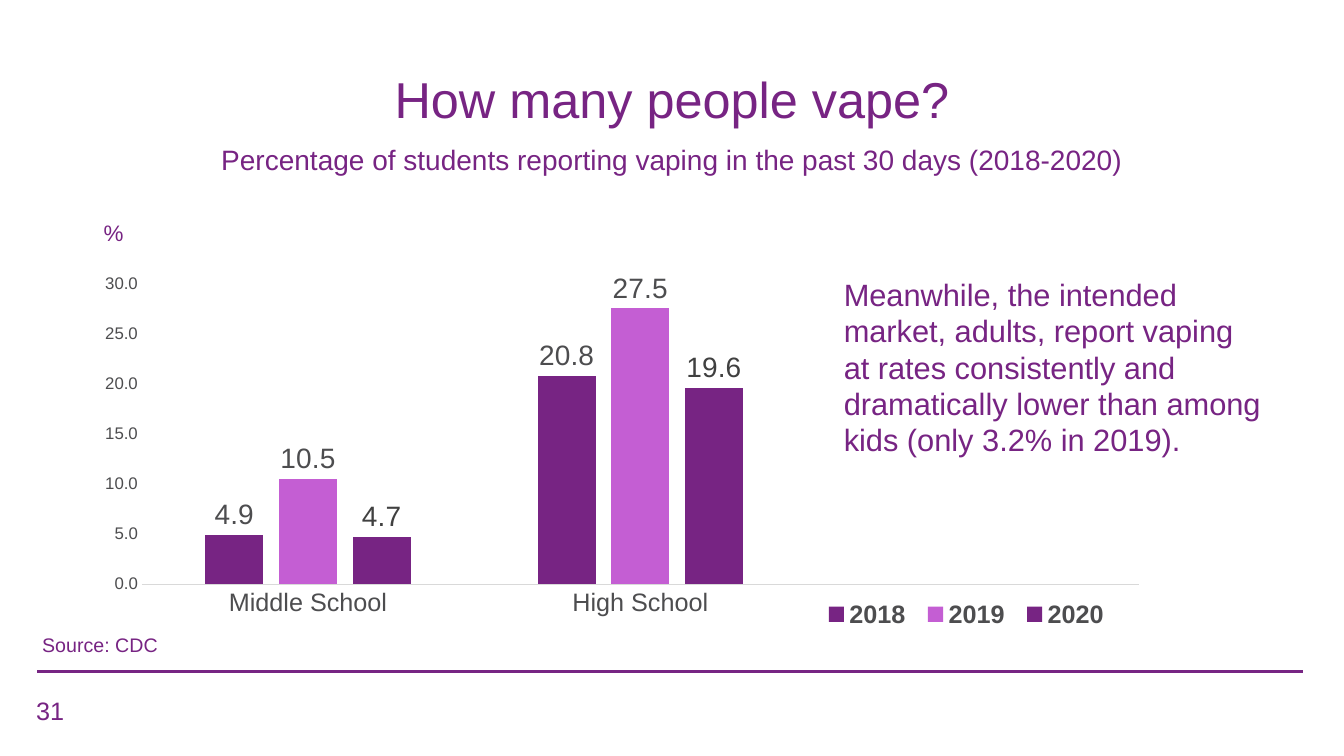
from lxml import etree
from pptx import Presentation
from pptx.chart.data import CategoryChartData
from pptx.dml.color import RGBColor
from pptx.enum.chart import XL_CHART_TYPE, XL_LABEL_POSITION, XL_LEGEND_POSITION, XL_TICK_MARK
from pptx.enum.shapes import MSO_CONNECTOR
from pptx.enum.text import MSO_ANCHOR, PP_ALIGN
from pptx.oxml.ns import qn
from pptx.util import Inches, Pt

FONT = "Arial"
PURPLE = "772483"
ORCHID = "C45ED3"
GRAY = "4D4D4F"


def color(value):
    """Turn a hex string into a colour."""
    return RGBColor.from_string(value)


def style_font(font, size, value, bold=False):
    """Set the typeface, size, colour and weight of a font."""
    font.name = FONT
    font.size = Pt(size)
    font.bold = bold
    font.color.rgb = color(value)


def add_text(slide, box, text, size, align=PP_ALIGN.LEFT, anchor=MSO_ANCHOR.TOP,
             spacing=None, wrap=True):
    """Place one paragraph of purple text in a box."""
    shape = slide.shapes.add_textbox(*map(Inches, box))
    frame = shape.text_frame
    frame.word_wrap = wrap
    frame.vertical_anchor = anchor
    paragraph = frame.paragraphs[0]
    paragraph.text = text
    paragraph.alignment = align
    paragraph.line_spacing = spacing
    for run in paragraph.runs:
        style_font(run.font, size, PURPLE)


def set_layout(parent, index, fractions, inner=False):
    """Fix the place of a chart part as fractions of the chart."""
    for old in parent.findall(qn("c:layout")):
        parent.remove(old)
    layout = etree.Element(qn("c:layout"))
    manual = etree.SubElement(layout, qn("c:manualLayout"))
    settings = [("layoutTarget", "inner")] if inner else []
    settings += [("xMode", "edge"), ("yMode", "edge")]
    settings += zip("xywh", map(str, fractions))
    for name, value in settings:
        etree.SubElement(manual, qn(f"c:{name}")).set("val", value)
    parent.insert(index, layout)


def style_axes(chart):
    """Format the category and value axes."""
    category_axis, value_axis = chart.category_axis, chart.value_axis
    for axis, size in ((category_axis, 18), (value_axis, 12)):
        axis.has_major_gridlines = False
        axis.major_tick_mark = axis.minor_tick_mark = XL_TICK_MARK.NONE
        style_font(axis.tick_labels.font, size, GRAY)
    category_axis.format.line.color.rgb = color("D9D9D9")
    category_axis.format.line.width = Pt(0.75)
    value_axis.format.line.fill.background()
    value_axis.minimum_scale, value_axis.maximum_scale = 0, 30
    value_axis.major_unit = 5
    value_axis.tick_labels.number_format = "0.0"
    value_axis.tick_labels.number_format_is_linked = False


def add_vaping_chart(slide, box):
    """Draw the columns by school level and year, with an empty third group."""
    data = CategoryChartData(number_format="0.0")
    data.categories = ["Middle School", "High School", ""]
    data.add_series("2018", (4.9, 20.8, None))
    data.add_series("2019", (10.5, 27.5, None))
    data.add_series("2020", (4.7, 19.6, None))
    chart = slide.shapes.add_chart(
        XL_CHART_TYPE.COLUMN_CLUSTERED, *map(Inches, box), data).chart
    chart.has_title = False
    style_font(chart.font, 10, "000000")
    style_axes(chart)

    plot = chart.plots[0]
    plot.gap_width, plot.overlap = 219, -27
    plot.vary_by_categories = False
    styles = ((PURPLE, GRAY), (ORCHID, GRAY), (PURPLE, "404040"))
    for series, (fill, label) in zip(plot.series, styles):
        series.format.fill.solid()
        series.format.fill.fore_color.rgb = color(fill)
        labels = series.data_labels
        labels.show_value = True
        labels.position = XL_LABEL_POSITION.OUTSIDE_END
        labels.number_format = "0.0"
        labels.number_format_is_linked = False
        style_font(labels.font, 20, label)

    chart.has_legend = True
    legend = chart.legend
    legend.position = XL_LEGEND_POSITION.BOTTOM
    legend.include_in_layout = False
    style_font(legend.font, 18, GRAY, bold=True)
    plot_area = chart.element.find(f".//{qn('c:plotArea')}")
    set_layout(plot_area, 0, (0.046, 0.033, 0.954, 0.752), inner=True)
    set_layout(chart.element.find(f".//{qn('c:legend')}"), 1, (0.69, 0.81, 0.29, 0.1))


def add_heading(slide, box):
    """Place the title with its subtitle below."""
    left, top, width, height = box
    add_text(slide, (left, top, width, 1.33), "How many people vape?", 36,
             PP_ALIGN.CENTER, MSO_ANCHOR.BOTTOM, 0.9)
    add_text(slide, (left + 1.12, top + 1.36, width - 2.24, height - 1.36),
             "Percentage of students reporting vaping in the past 30 days (2018-2020)",
             20, PP_ALIGN.CENTER)


def add_body(slide, box):
    """Place the chart, its unit and the remark beside it."""
    left, top, width, height = box
    add_text(slide, (left, top, 0.35, 0.37), "%", 16)
    add_vaping_chart(slide, (left, top + 0.56, 10.37, height - 0.56))
    add_text(slide, (left + width - 4.55, top + 0.57, 4.55, 1.95),
             "Meanwhile, the intended market, adults, report vaping\n"
             "at rates consistently and dramatically lower than among "
             "kids (only 3.2% in 2019).", 22, spacing=Pt(26))


def add_footer(slide, box):
    """Place the source, the rule and the page number."""
    left, top, width, height = box
    add_text(slide, (left - 0.05, top, 1.36, 0.34), "Source: CDC", 14, wrap=False)
    rule = slide.shapes.add_connector(
        MSO_CONNECTOR.STRAIGHT, Inches(left), Inches(top + 0.43),
        Inches(left + width), Inches(top + 0.43))
    rule.line.color.rgb = color("772583")
    rule.line.width = Pt(2.25)
    etree.SubElement(rule.element.spPr, qn("a:effectLst"))
    add_text(slide, (left - 0.11, top + height - 0.4, 3, 0.4), "31", 18)


def main():
    """Build and save the slide."""
    presentation = Presentation()
    presentation.slide_width = Inches(13.33)
    presentation.slide_height = Inches(7.5)
    slide = presentation.slides.add_slide(presentation.slide_layouts[6])
    add_heading(slide, (0.6, 0, 12.13, 1.8))
    add_body(slide, (0.93, 2.12, 11.89, 4.53))
    add_footer(slide, (0.37, 6.23, 12.55, 1.02))
    presentation.save("out.pptx")


if __name__ == "__main__":
    main()
